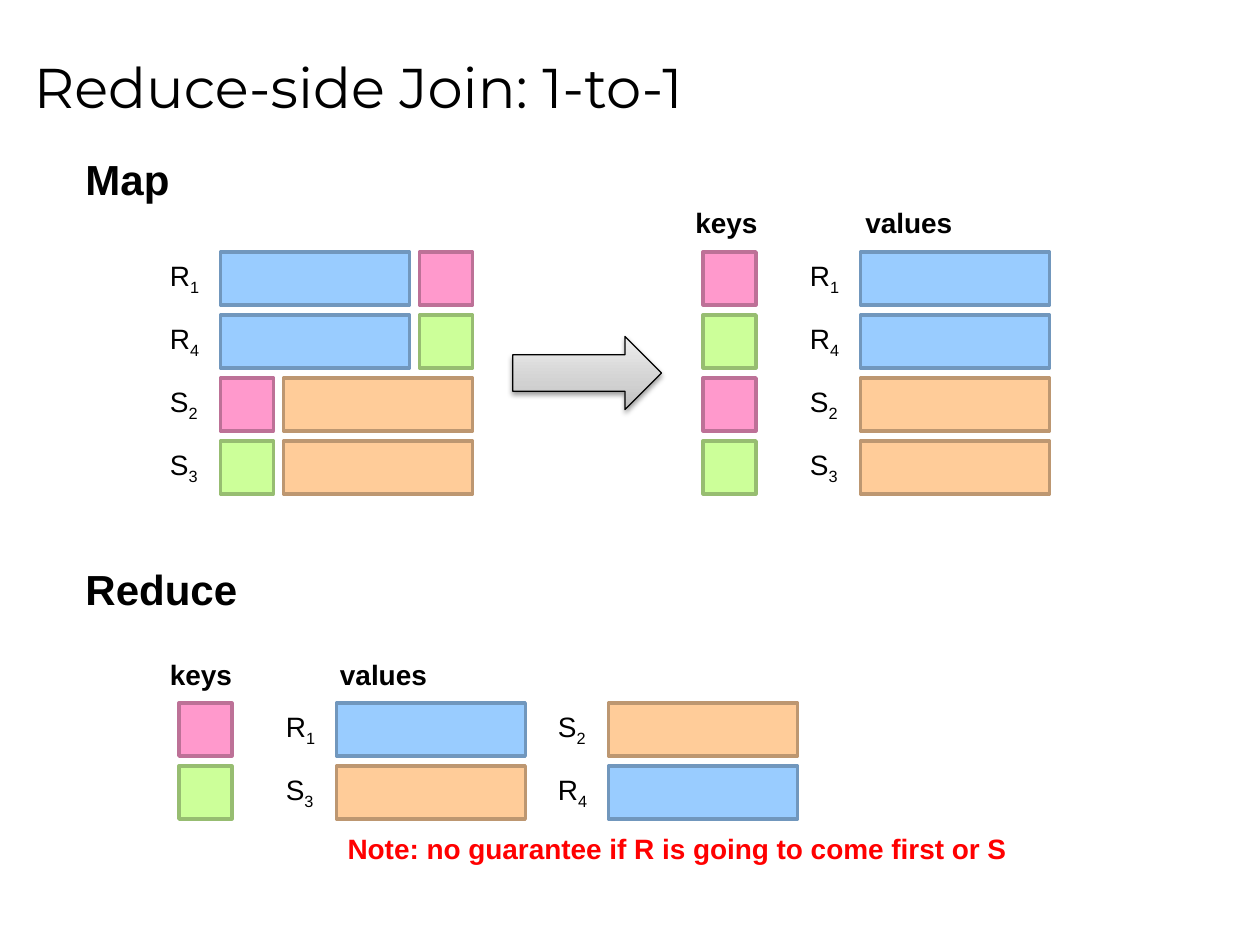
from lxml import etree
from pptx import Presentation
from pptx.dml.color import RGBColor
from pptx.enum.shapes import MSO_SHAPE
from pptx.enum.text import MSO_ANCHOR, MSO_AUTO_SIZE
from pptx.oxml import parse_xml
from pptx.oxml.ns import qn
from pptx.util import Inches, Pt

RECTANGLE = MSO_SHAPE.RECTANGLE
RIGHT_ARROW = MSO_SHAPE.RIGHT_ARROW
MIDDLE = MSO_ANCHOR.MIDDLE
FIT_SHAPE = MSO_AUTO_SIZE.SHAPE_TO_FIT_TEXT
DRAWING_NS = "http://schemas.openxmlformats.org/drawingml/2006/main"

COLORS = {
    "black": "000000", "note": "FF0000",
    "blue": "99CCFF", "blue line": "7197BD",
    "orange": "FFCC99", "orange line": "BD9771",
    "pink": "FF99CC", "pink line": "BD7197",
    "green": "CCFF99", "green line": "97BD71",
    "arrow dark": "BDBDBD", "arrow middle": "D1D1D1", "arrow light": "EEEEEE",
}
RECORD_COLORS = {"R": "blue", "S": "orange"}
KEY_COLORS = {"R1": "pink", "R4": "green", "S2": "pink", "S3": "green"}
KEY_SIZE, VALUE_WIDTH, ROW_STEP = 0.42, 1.5, 0.5
LABEL_OFFSET = 0.5


def add_text(shapes, left, top, width, height, text, size=16, bold=False,
             color="black", font="Arial", subscript=""):
    box = shapes.add_textbox(Inches(left), Inches(top), Inches(width), Inches(height))
    box.text_frame.word_wrap = False
    box.text_frame.auto_size = FIT_SHAPE
    para = box.text_frame.paragraphs[0]
    for part in filter(None, (text, subscript)):
        span = para.add_run()
        span.text = part
        span.font.name = font
        span.font.size = Pt(size)
        span.font.bold = bold
        span.font.color.rgb = RGBColor.from_string(COLORS[color])
    if subscript:
        span.font._element.set("baseline", "-25000")
    return box


def add_block(shapes, left, top, width, color):
    block = shapes.add_shape(RECTANGLE, Inches(left), Inches(top), Inches(width), Inches(KEY_SIZE))
    block.shadow.inherit = False
    block.fill.solid()
    block.fill.fore_color.rgb = RGBColor.from_string(COLORS[color])
    block.line.color.rgb = RGBColor.from_string(COLORS[color + " line"])
    block.line.width = Pt(2)


deck = Presentation()
deck.slide_width, deck.slide_height = Inches(10), Inches(7.5)
page = deck.slides.add_slide(deck.slide_layouts[6])

title = add_text(page.shapes, 0.17, 0.12, 9.5, 1.12, "Reduce-side Join: 1-to-1",
                 size=32, font="Montserrat")
title.text_frame.word_wrap = True
title.text_frame.auto_size = MSO_AUTO_SIZE.NONE
title.text_frame.vertical_anchor = MIDDLE

# Map: input records on the left, keyed records on the right
for row, (record, key_color) in enumerate(KEY_COLORS.items()):
    top = 2 + row * ROW_STEP
    relation, number = record
    value_color = RECORD_COLORS[relation]
    value_left, key_left = (1.75, 3.33) if relation == "R" else (2.25, 1.75)
    group = page.shapes.add_group_shape().shapes
    add_block(group, value_left, top, VALUE_WIDTH, value_color)
    add_text(group, 1.25, top, 0.45, 0.37, relation, subscript=number)
    add_block(group, key_left, top, KEY_SIZE, key_color)

    add_block(page.shapes, 5.58, top, KEY_SIZE, key_color)
    add_text(page.shapes, 6.83 - LABEL_OFFSET, top, 0.45, 0.37, relation, subscript=number)
    add_block(page.shapes, 6.83, top, VALUE_WIDTH, value_color)

# Arrow from input to output, with gradient and soft shadow
arrow = page.shapes.add_shape(RIGHT_ARROW, Inches(4.07), Inches(2.67), Inches(1.18), Inches(0.58))
arrow.shadow.inherit = False
arrow.line.color.rgb = RGBColor.from_string(COLORS["black"])
arrow.line.width = Pt(0.75)
arrow.fill.gradient()
gradient = arrow._element.spPr.find(qn("a:gradFill"))
gradient.find(qn("a:lin")).set("ang", str(270 * 60000))
stops = gradient.find(qn("a:gsLst"))
for stop in list(stops):
    stops.remove(stop)
for position, color in ((0, "arrow dark"), (35, "arrow middle"), (100, "arrow light")):
    stop = etree.SubElement(stops, qn("a:gs"), pos=str(position * 1000))
    etree.SubElement(stop, qn("a:srgbClr"), val=COLORS[color])
arrow._element.spPr.find(qn("a:effectLst")).append(parse_xml(
    f'<a:outerShdw xmlns:a="{DRAWING_NS}" blurRad="{Pt(3.1)}" dist="{Pt(1.6)}" '
    f'dir="{90 * 60000}" rotWithShape="0"><a:srgbClr val="{COLORS["black"]}">'
    '<a:alpha val="38000"/></a:srgbClr></a:outerShdw>'))

# Reduce: records grouped by key
for row, (key_color, records) in enumerate((("pink", ("R1", "S2")), ("green", ("S3", "R4")))):
    top = 5.58 + row * ROW_STEP
    add_block(page.shapes, 1.42, top, KEY_SIZE, key_color)
    for left, (relation, number) in zip((2.67, 4.83), records):
        add_text(page.shapes, left - LABEL_OFFSET, top, 0.45, 0.37, relation, subscript=number)
        add_block(page.shapes, left, top, VALUE_WIDTH, RECORD_COLORS[relation])

# Headings and note
for text, top, width in (("Map", 1.17, 0.88), ("Reduce", 4.42, 1.42)):
    add_text(page.shapes, 0.58, top, width, 0.5, text, size=24, bold=True)
for keys_left, values_left, top in ((5.42, 6.77, 1.58), (1.25, 2.6, 5.17)):
    add_text(page.shapes, keys_left, top, 0.7, 0.37, "keys", bold=True)
    add_text(page.shapes, values_left, top, 0.9, 0.37, "values", bold=True)
add_text(page.shapes, 2.66, 6.55, 5.51, 0.37,
         "Note: no guarantee if R is going to come first or S", bold=True, color="note")

deck.save("out.pptx")
